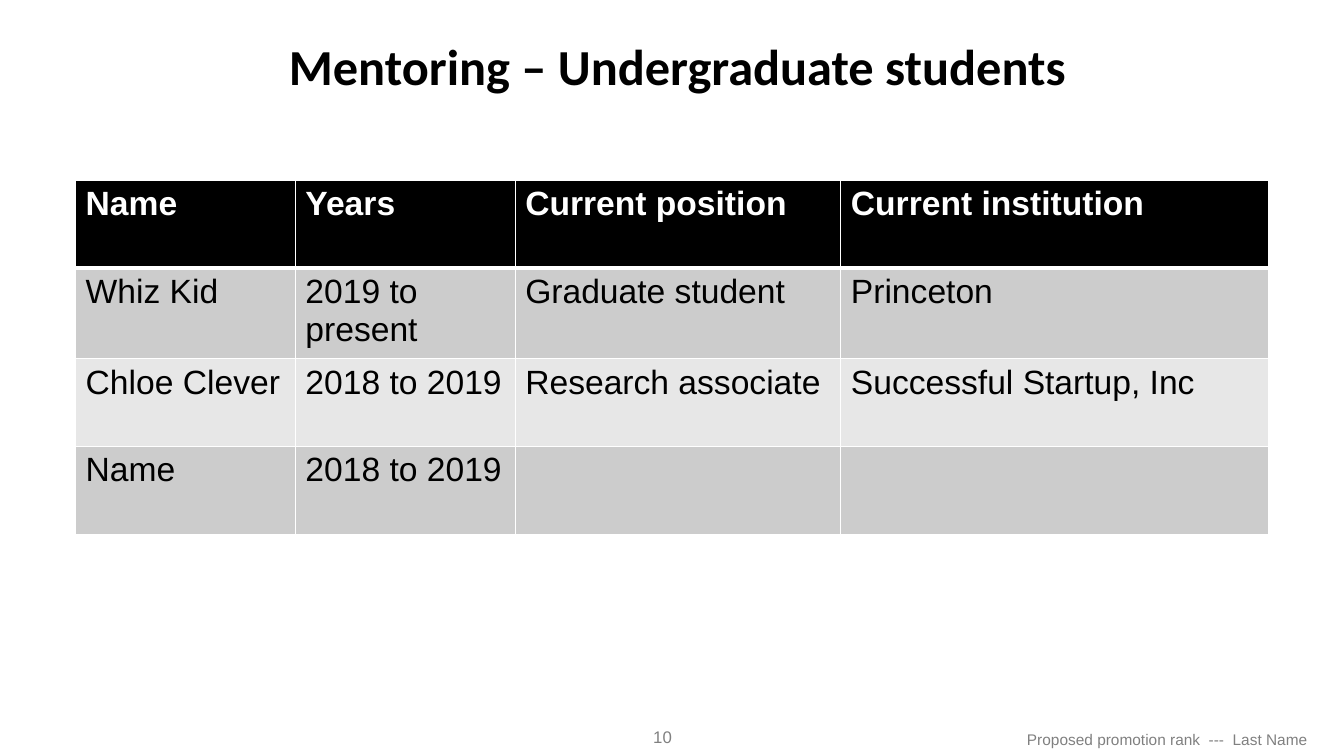
from lxml import etree
from pptx import Presentation
from pptx.dml.color import RGBColor
from pptx.enum.text import MSO_ANCHOR, PP_ALIGN
from pptx.oxml.ns import qn
from pptx.util import Inches, Pt

LEFT, CENTER, RIGHT = PP_ALIGN.LEFT, PP_ALIGN.CENTER, PP_ALIGN.RIGHT
TOP = MSO_ANCHOR.TOP
BLACK, WHITE, GRAY = "000000", "FFFFFF", "808080"
HEADER_FILL, BAND_FILLS = BLACK, ("CCCCCC", "E7E7E7")
COLUMN_WIDTHS = (2.18, 2.18, 3.23, 4.24)
ROW_HEIGHT = 0.87
STUDENTS = (
    ("Name", "Years", "Current position", "Current institution"),
    ("Whiz Kid", "2019 to present", "Graduate student", "Princeton"),
    ("Chloe Clever", "2018 to 2019", "Research associate", "Successful Startup, Inc"),
    ("Name", "2018 to 2019", "", ""),
)


def color(value):
    """Return the colour for a hex string."""
    return RGBColor.from_string(value)


def write(frame, text, align, hex_color, **formats):
    """Fill a text frame with one formatted paragraph."""
    frame.word_wrap = True
    para = frame.paragraphs[0]
    para.alignment = align
    span = para.add_run()
    span.text = text
    span.font.color.rgb = color(hex_color)
    for name, value in formats.items():
        setattr(span.font, name, value)


def place(shape, left, top, width, height):
    """Position and size a shape in inches."""
    bounds = {"left": left, "top": top, "width": width, "height": height}
    for name, value in bounds.items():
        setattr(shape, name, Inches(value))


def add_title(page, text):
    """Place and fill the title placeholder."""
    title = page.shapes.title
    place(title, 0.75, 0.3, 11.94, 0.53)
    title.text_frame.vertical_anchor = TOP
    write(title.text_frame, text, CENTER, BLACK, size=Pt(36), name="Calibri", bold=True)


def add_footer(page, text, bounds, align, size):
    """Add a small gray line at the foot of the slide."""
    box = page.shapes.add_textbox(*map(Inches, bounds))
    write(box.text_frame, text, align, GRAY, size=Pt(size), name="Arial")


def set_borders(cell, widths):
    """Draw white cell borders with the given point widths by side."""
    properties = cell._tc.get_or_add_tcPr()
    for position, (side, width) in enumerate(widths.items()):
        line = etree.Element(qn(f"a:ln{side}"), w=str(Pt(width)))
        fill = etree.SubElement(line, qn("a:solidFill"))
        etree.SubElement(fill, qn("a:srgbClr"), val=WHITE)
        properties.insert(position, line)


def add_students(page):
    """Add the banded table of students."""
    rows, columns = len(STUDENTS), len(COLUMN_WIDTHS)
    table = page.shapes.add_table(
        rows, columns, Inches(0.75), Inches(1.79),
        Inches(sum(COLUMN_WIDTHS)), Inches(rows * ROW_HEIGHT),
    ).table
    for column, width in zip(table.columns, COLUMN_WIDTHS):
        column.width = Inches(width)
    for index, student in enumerate(STUDENTS):
        header = index == 0
        table.rows[index].height = Inches(ROW_HEIGHT)
        fill = HEADER_FILL if header else BAND_FILLS[(index - 1) % 2]
        borders = {"L": 1, "R": 1, "T": 3 if index == 1 else 1, "B": 3 if header else 1}
        for position, text in enumerate(student):
            cell = table.cell(index, position)
            cell.fill.solid()
            cell.fill.fore_color.rgb = color(fill)
            set_borders(cell, borders)
            if text:
                write(cell.text_frame, text, LEFT, WHITE if header else BLACK,
                      size=Pt(24), name="Arial", bold=header)


def main():
    """Build and save the slide."""
    deck = Presentation()
    deck.slide_width, deck.slide_height = Inches(13.33), Inches(7.5)
    page = deck.slides.add_slide(deck.slide_layouts.get_by_name("Title Only"))
    add_footer(page, "10", (6.38, 7.16, 0.61, 0.3), LEFT, 12)
    add_footer(page, "Proposed promotion rank  ---  Last Name",
               (8.85, 7.19, 4.22, 0.24), RIGHT, 11)
    add_title(page, "Mentoring – Undergraduate students")
    add_students(page)
    deck.save("out.pptx")


if __name__ == "__main__":
    main()
